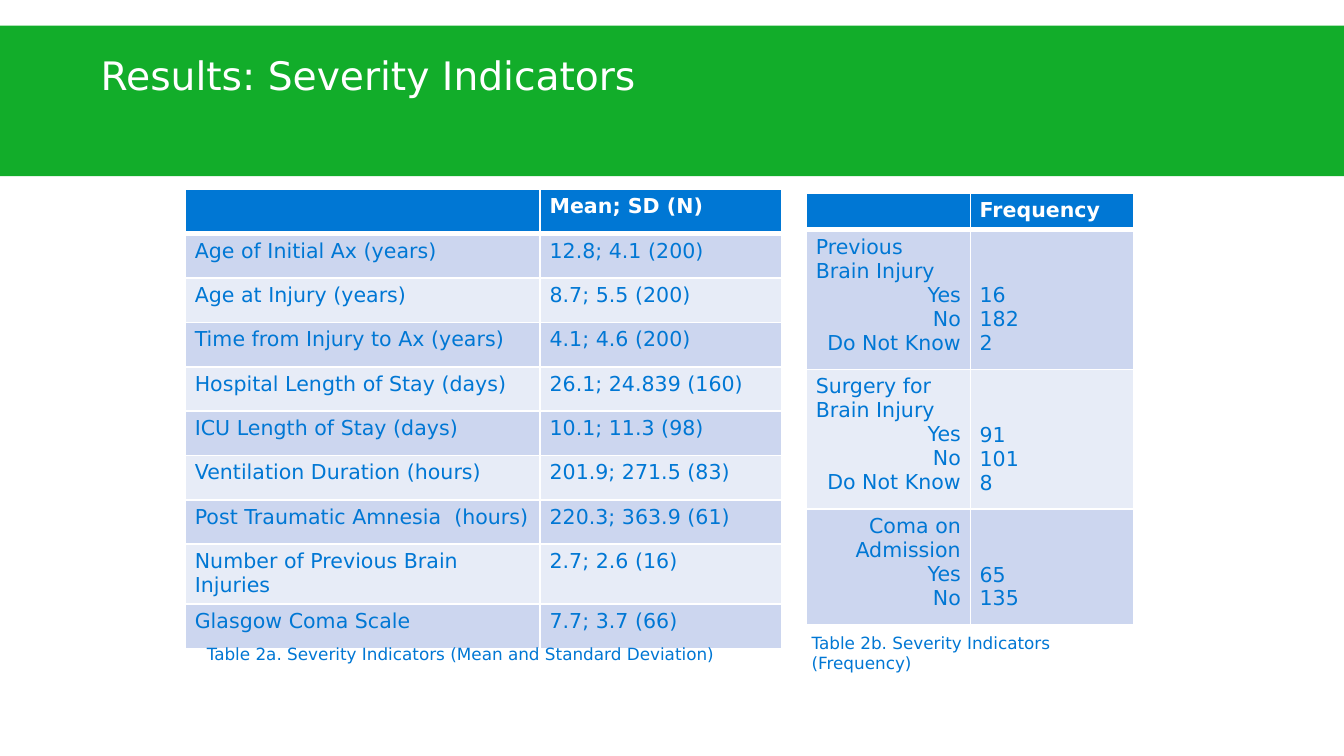
from lxml import etree
from pptx import Presentation
from pptx.dml.color import RGBColor
from pptx.enum.shapes import MSO_SHAPE
from pptx.enum.text import PP_ALIGN
from pptx.oxml.ns import qn
from pptx.util import Inches, Pt

RECT = MSO_SHAPE.RECTANGLE
LEFT, RIGHT = PP_ALIGN.LEFT, PP_ALIGN.RIGHT
GREEN = RGBColor(0x12, 0xAD, 0x2A)
BLUE = RGBColor(0x00, 0x77, 0xD4)
DARK = RGBColor(0xCC, 0xD6, 0xEF)
PALE = RGBColor(0xE7, 0xEC, 0xF7)
WHITE = RGBColor(0xFF, 0xFF, 0xFF)
FONT = "DejaVu Sans"
SIZE = 11
LINE = 0.18

MEANS = [
    ("", "Mean; SD (N)"),
    ("Age of Initial Ax (years)", "12.8; 4.1 (200)"),
    ("Age at Injury (years)", "8.7; 5.5 (200)"),
    ("Time from Injury to Ax (years)", "4.1; 4.6 (200)"),
    ("Hospital Length of Stay (days)", "26.1; 24.839 (160)"),
    ("ICU Length of Stay (days)", "10.1; 11.3 (98)"),
    ("Ventilation Duration (hours)", "201.9; 271.5 (83)"),
    ("Post Traumatic Amnesia  (hours)", "220.3; 363.9 (61)"),
    ("Number of Previous Brain Injuries", "2.7; 2.6 (16)"),
    ("Glasgow Coma Scale", "7.7; 3.7 (66)"),
]
COUNTS = [
    ("Previous Brain Injury", LEFT, ["Yes", "No", "Do Not Know"], ["16", "182", "2"]),
    ("Surgery for Brain Injury", LEFT, ["Yes", "No", "Do Not Know"], ["91", "101", "8"]),
    ("Coma on Admission\nYes", RIGHT, ["No"], ["65", "135"]),
]


def add_run(para, text, size, color, bold=False):
    """Add styled text to a paragraph, one run for each line."""
    for i, part in enumerate(text.split("\n")):
        if i:
            para.add_line_break()
        run = para.add_run()
        run.text = part
        run.font.name = FONT
        run.font.size = Pt(size)
        run.font.color.rgb = color
        run.font.bold = bold


def add_text(slide, box, text, size, color, inset):
    """Place a wrapped line of text in a box."""
    frame = slide.shapes.add_textbox(*map(Inches, box)).text_frame
    frame.word_wrap = True
    frame.margin_left = frame.margin_right = Inches(inset)
    frame.margin_top = frame.margin_bottom = Inches(inset / 2)
    add_run(frame.paragraphs[0], text, size, color)


def add_band(slide, box, title):
    """Draw the green band and its title."""
    left, top, width, height = box
    band = slide.shapes.add_shape(RECT, *map(Inches, box))
    band.shadow.inherit = False
    band.fill.solid()
    band.fill.fore_color.rgb = GREEN
    band.line.fill.background()
    area = (left + 0.75, top + 0.19, width - 1.5, height - 0.18)
    add_text(slide, area, title, 21, WHITE, 0)


def set_edge(cell, side, width):
    """Give one side of a cell a white border."""
    props = cell._tc.get_or_add_tcPr()
    edge = etree.SubElement(props, qn("a:" + side), w=str(Pt(width)))
    fill = etree.SubElement(edge, qn("a:solidFill"))
    etree.SubElement(fill, qn("a:srgbClr"), val=str(WHITE))


def fill_cell(cell, lines, row, drop=0):
    """Style a cell and write its (text, align) lines, lowered by drop."""
    thick = {"lnT": 3 if row == 1 else 1, "lnB": 3 if row == 0 else 1}
    for side in ("lnL", "lnR", "lnT", "lnB"):
        set_edge(cell, side, thick.get(side, 1))
    cell.fill.solid()
    cell.fill.fore_color.rgb = BLUE if row == 0 else DARK if row % 2 else PALE
    cell.margin_left = cell.margin_right = Inches(0.07)
    cell.margin_top = Inches(0.04 + drop)
    cell.margin_bottom = Inches(0.04)
    frame = cell.text_frame
    for i, (text, align) in enumerate(lines):
        para = frame.add_paragraph() if i else frame.paragraphs[0]
        para.alignment = align
        if text:
            add_run(para, text, SIZE, BLUE if row else WHITE, row == 0)
        else:
            etree.SubElement(para._p, qn("a:endParaRPr"), sz=str(SIZE * 100))


def add_grid(slide, box, cols, rows):
    """Add a plain table with the given column widths and row heights."""
    shape = slide.shapes.add_table(len(rows), len(cols), *map(Inches, box))
    table = shape.table
    for col, width in zip(table.columns, cols):
        col.width = Inches(width)
    for row, height in zip(table.rows, rows):
        row.height = Inches(height)
    return table


def add_means(slide, box):
    """Build the table of means with its caption."""
    left, top, width, height = box
    rows = [0.42 if len(name) > 32 else 0.33 for name, _ in MEANS]
    table = add_grid(slide, box, (2.64, width - 2.64), rows)
    for r, pair in enumerate(MEANS):
        for c, text in enumerate(pair):
            fill_cell(table.cell(r, c), [(text, LEFT)], r)
    note = "Table 2a. Severity Indicators (Mean and Standard Deviation)"
    add_text(slide, (left + 0.06, top + height + 0.03, 4.25, 0.25), note, 9, BLUE, 0.1)


def add_counts(slide, box):
    """Build the table of frequencies with its caption."""
    left, top, width, height = box
    rows = [0.27] + [0.32 + LINE * (len(nums) + 1) for *_, nums in COUNTS]
    table = add_grid(slide, box, (width / 2, width / 2), rows)
    for c, text in enumerate(("", "Frequency")):
        fill_cell(table.cell(0, c), [(text, LEFT)], 0)
    for r, (name, align, keys, nums) in enumerate(COUNTS, 1):
        names = [(name, align)] + [(key, RIGHT) for key in keys]
        fill_cell(table.cell(r, 0), names, r)
        fill_cell(table.cell(r, 1), [(num, LEFT) for num in nums], r, 2 * LINE)
    note = "Table 2b. Severity Indicators (Frequency)"
    add_text(slide, (left - 0.06, top + height + 0.03, 2.69, 0.4), note, 9, BLUE, 0.1)


def main():
    """Build and save the slide."""
    deck = Presentation()
    deck.slide_width, deck.slide_height = Inches(10), Inches(10 * 9 / 16)
    slide = deck.slides.add_slide(deck.slide_layouts[6])
    add_band(slide, (0, 0.19, 10, 1.12), "Results: Severity Indicators")
    add_means(slide, (1.38, 1.41, 4.44, 3.3))
    add_counts(slide, (6, 1.44, 2.44, 3.19))
    deck.save("out.pptx")


if __name__ == "__main__":
    main()
